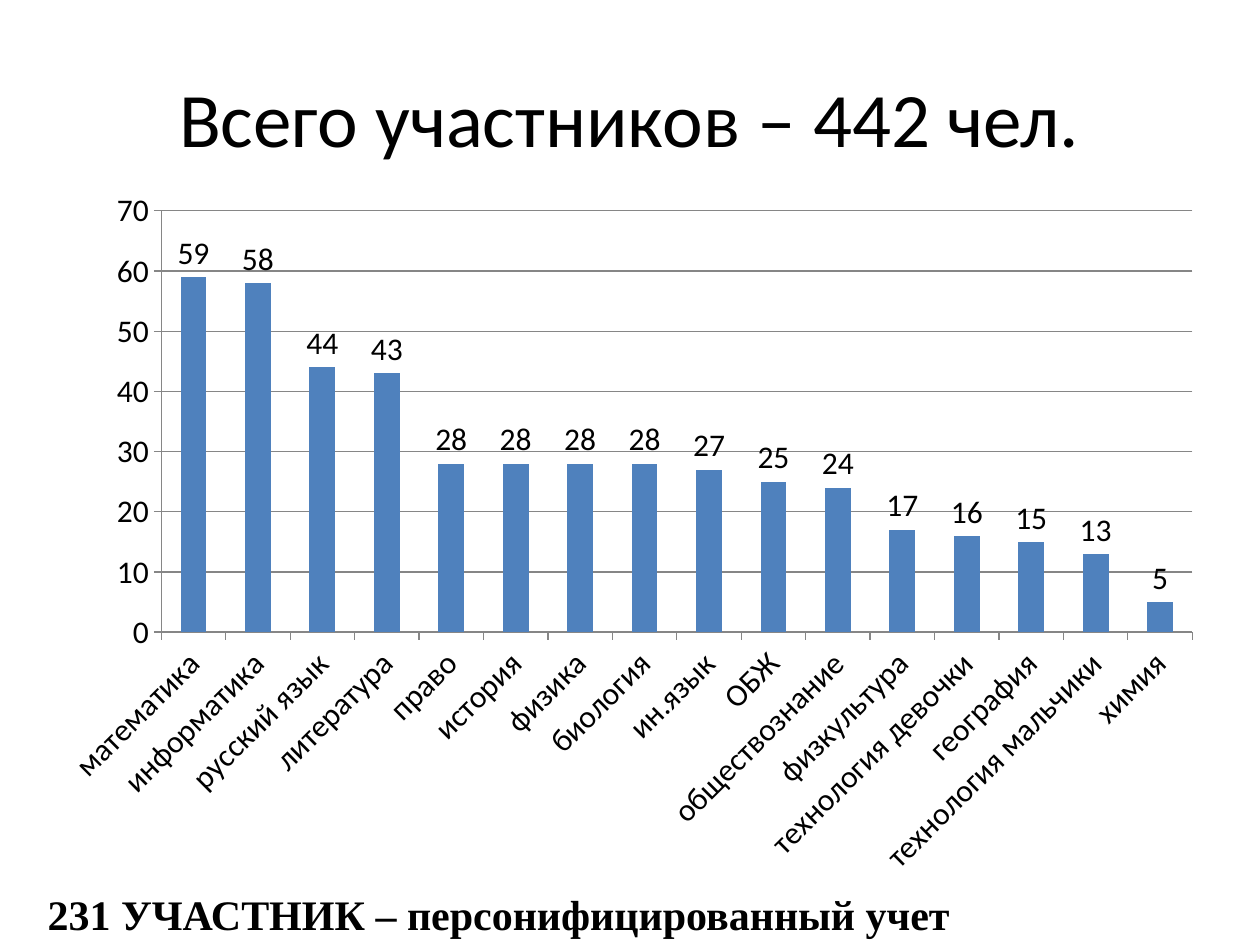
from pptx import Presentation
from pptx import util as u
from pptx.chart.data import CategoryChartData
from pptx.dml.color import RGBColor
from pptx.enum import chart as ch, text
from pptx.oxml import parse_xml
from pptx.oxml.ns import nsdecls, qn

COLORS = {"text": "000000", "bar": "4F81BD", "grid": "868686"}
PARTICIPANTS = {
    "математика": 59, "информатика": 58, "русский язык": 44, "литература": 43,
    "право": 28, "история": 28, "физика": 28, "биология": 28, "ин.язык": 27,
    "ОБЖ": 25, "обществознание": 24, "физкультура": 17, "технология девочки": 16,
    "география": 15, "технология мальчики": 13, "химия": 5,
}
PLOT_FRACTIONS = {"x": 0.1, "y": 0.05, "w": 0.88, "h": 0.59}


def color(name):
    """Return the named colour of the palette."""
    return RGBColor.from_string(COLORS[name])


def style_font(font, size, face="Calibri", bold=False):
    """Give a font its face, size, weight and the text colour."""
    font.name, font.size, font.bold = face, u.Pt(size), bold
    font.color.rgb = color("text")


def fill_title(heading, box):
    """Place the title placeholder in the box and write the total."""
    heading.left, heading.top, heading.width, heading.height = box
    frame = heading.text_frame
    frame.text = "Всего участников – 442 чел."
    frame.vertical_anchor = text.MSO_ANCHOR.MIDDLE
    total = frame.paragraphs[0]
    total.alignment = text.PP_ALIGN.CENTER
    style_font(total.font, 44)


def set_plot_layout(chart):
    """Fix the inner plot area at the fractions of the chart box."""
    plot_area = chart.plots[0]._element.getparent()
    for old in plot_area.findall(qn("c:layout")):
        plot_area.remove(old)
    sizes = "".join(f'<c:{side} val="{part}"/>' for side, part in PLOT_FRACTIONS.items())
    plot_area.insert(0, parse_xml(
        f'<c:layout {nsdecls("c")}><c:manualLayout><c:layoutTarget val="inner"/>'
        f'<c:xMode val="edge"/><c:yMode val="edge"/>{sizes}'
        '</c:manualLayout></c:layout>'))


def add_subject_chart(slide, box):
    """Draw the participants per subject as columns in the box."""
    subjects = CategoryChartData()
    subjects.categories = list(PARTICIPANTS)
    subjects.add_series("Series 1", list(PARTICIPANTS.values()))
    chart = slide.shapes.add_chart(
        ch.XL_CHART_TYPE.COLUMN_CLUSTERED, *box, subjects).chart
    chart.has_legend = chart.has_title = False
    style_font(chart.font, 18)
    set_plot_layout(chart)

    columns = chart.plots[0]
    columns.gap_width = 150
    columns.vary_by_categories = False
    fill = columns.series[0].format.fill
    fill.solid()
    fill.fore_color.rgb = color("bar")
    columns.has_data_labels = True
    labels = columns.data_labels
    labels.show_value = True
    labels.position = ch.XL_LABEL_POSITION.OUTSIDE_END
    style_font(labels.font, 18)

    counts = chart.value_axis
    counts.minimum_scale, counts.maximum_scale, counts.major_unit = 0, 70, 10
    counts.has_major_gridlines = True
    for axis in (chart.category_axis, counts):
        axis.major_tick_mark = ch.XL_TICK_MARK.OUTSIDE
        axis.minor_tick_mark = ch.XL_TICK_MARK.NONE
        style_font(axis.tick_labels.font, 18)
    for item in (chart.category_axis, counts, counts.major_gridlines):
        item.format.line.color.rgb = color("grid")
        item.format.line.width = u.Pt(0.75)
    rotation = chart.category_axis._element.find(qn("c:txPr")).find(qn("a:bodyPr"))
    rotation.set("rot", "-2700000")
    rotation.set("vert", "horz")


def add_footnote(slide, box):
    """Write the personal count under the chart."""
    frame = slide.shapes.add_textbox(*box).text_frame
    frame.word_wrap = True
    frame.auto_size = text.MSO_AUTO_SIZE.SHAPE_TO_FIT_TEXT
    frame.text = "231 УЧАСТНИК – персонифицированный учет"
    style_font(frame.paragraphs[0].font, 24, "Times New Roman", True)


def box_cm(*lengths):
    """Turn left, top, width and height in centimetres into lengths."""
    return [u.Cm(length) for length in lengths]


def main():
    """Build the slide and save it."""
    deck = Presentation()
    deck.slide_width, deck.slide_height = u.Cm(25.4), u.Cm(19.05)
    slide = deck.slides.add_slide(deck.slide_layouts[5])
    fill_title(slide.shapes.title, box_cm(1.27, 0.76, 22.86, 3.18))
    add_subject_chart(slide, box_cm(0.89, 3.53, 23.62, 14.4))
    add_footnote(slide, box_cm(0.71, 17.78, 19.81, 1.27))
    deck.save("out.pptx")


if __name__ == "__main__":
    main()
